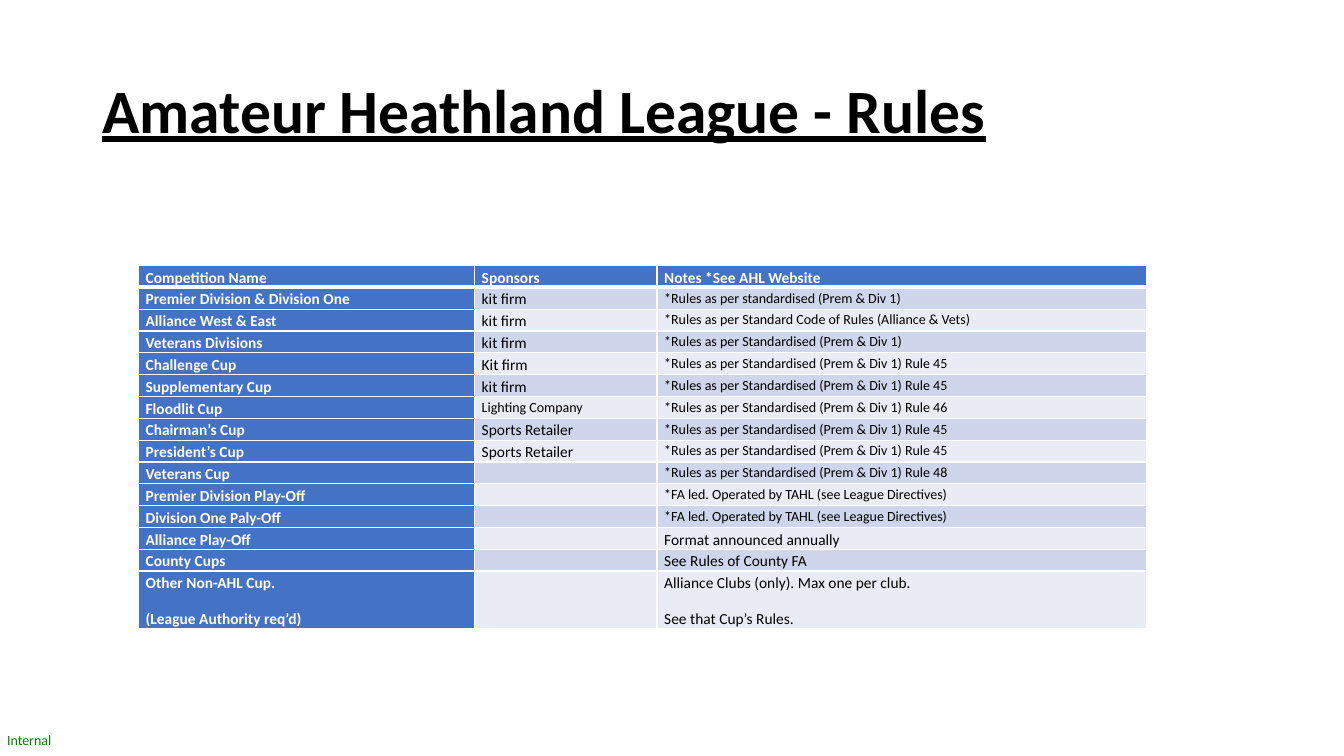
"""Build the league rules slide with its table of competitions."""
from dataclasses import dataclass

from lxml import etree
from pptx import Presentation
from pptx.dml.color import RGBColor
from pptx.enum.text import MSO_ANCHOR, MSO_AUTO_SIZE
from pptx.oxml.ns import qn
from pptx.slide import Slide
from pptx.table import _Cell
from pptx.text.text import TextFrame
from pptx.util import Cm, Length, Pt

MIDDLE, TOP = MSO_ANCHOR.MIDDLE, MSO_ANCHOR.TOP
NO_FIT, GROW = MSO_AUTO_SIZE.NONE, MSO_AUTO_SIZE.SHAPE_TO_FIT_TEXT


@dataclass(frozen=True)
class Theme:
    """Colours, font and type sizes of the slide."""

    font: str = "Calibri"
    ink: str = "000000"
    paper: str = "FFFFFF"
    heading: str = "4472C4"
    odd_band: str = "CFD5EA"
    even_band: str = "E9EBF5"
    label: str = "008000"
    title_size: Length = Pt(44)
    body_size: Length = Pt(11)
    small_size: Length = Pt(10)
    rule: Length = Pt(1)
    header_rule: Length = Pt(3)


@dataclass(frozen=True)
class TextStyle:
    """Look of the runs in one text."""

    size: Length
    color: str
    bold: bool = False
    underline: bool = False


@dataclass(frozen=True)
class Competition:
    """One row of the rules table."""

    name: str
    sponsor: str
    notes: str
    small_sponsor: bool = False


THEME = Theme()
HEADING = TextStyle(THEME.body_size, THEME.paper, bold=True)
BODY = TextStyle(THEME.body_size, THEME.ink)
SMALL = TextStyle(THEME.small_size, THEME.ink)
TITLE = TextStyle(THEME.title_size, THEME.ink, bold=True, underline=True)
LABEL = TextStyle(THEME.small_size, THEME.label)

RULE_45 = "*Rules as per Standardised (Prem & Div 1) Rule 45"
FA_LED = "*FA led. Operated by TAHL (see League Directives)"
HEADER = Competition("Competition Name", "Sponsors", "Notes *See AHL Website")
COMPETITIONS = (
    Competition("Premier Division & Division One", "kit firm", "*Rules as per standardised (Prem & Div 1)"),
    Competition("Alliance West & East", "kit firm", "*Rules as per Standard Code of Rules (Alliance & Vets)"),
    Competition("Veterans Divisions", "kit firm", "*Rules as per Standardised (Prem & Div 1)"),
    Competition("Challenge Cup", "Kit firm", RULE_45),
    Competition("Supplementary Cup", "kit firm", RULE_45),
    Competition("Floodlit Cup", "Lighting Company", "*Rules as per Standardised (Prem & Div 1) Rule 46", small_sponsor=True),
    Competition("Chairman’s Cup", "Sports Retailer", RULE_45),
    Competition("President’s Cup", "Sports Retailer", RULE_45),
    Competition("Veterans Cup", "", "*Rules as per Standardised (Prem & Div 1) Rule 48"),
    Competition("Premier Division Play-Off", "", FA_LED),
    Competition("Division One Paly-Off", "", FA_LED),
    Competition("Alliance Play-Off", "", "Format announced annually"),
    Competition("County Cups", "", "See Rules of County FA"),
    Competition(
        "Other Non-AHL Cup.\n(League Authority req’d)",
        "",
        "Alliance Clubs (only). Max one per club.\nSee that Cup’s Rules.",
    ),
)
COLUMN_WIDTHS = (Cm(8.47), Cm(4.6), Cm(12.33))
ROW_HEIGHT, LAST_ROW_HEIGHT = Cm(0.55), Cm(1.45)


def write(frame: TextFrame, text: str, style: TextStyle, **spacing: object) -> None:
    """Fill a text frame, one paragraph for each line."""
    frame.text = text
    run_format = {"name": THEME.font, "size": style.size, "bold": style.bold, "underline": style.underline}
    for paragraph in frame.paragraphs:
        for key, value in spacing.items():
            setattr(paragraph, key, value)
        for run in paragraph.runs:
            for key, value in run_format.items():
                setattr(run.font, key, value)
            run.font.color.rgb = RGBColor.from_string(style.color)
        if not paragraph.runs:
            etree.SubElement(paragraph._p, qn("a:endParaRPr"), sz=str(int(style.size.pt * 100)))


def add_text(
    slide: Slide, box: tuple[Length, ...], text: str, style: TextStyle, frame_format: dict[str, object], **spacing: object
) -> None:
    """Add a text box with the given frame format."""
    frame = slide.shapes.add_textbox(*box).text_frame
    for key, value in frame_format.items():
        setattr(frame, key, value)
    write(frame, text, style, **spacing)


def add_borders(cell: _Cell, top: Length, bottom: Length) -> None:
    """Rule the four sides of a cell."""
    sides = {"lnL": THEME.rule, "lnR": THEME.rule, "lnT": top, "lnB": bottom}
    for side, width in sides.items():
        line = etree.SubElement(cell._tc.get_or_add_tcPr(), qn(f"a:{side}"), w=str(int(width)))
        fill = etree.SubElement(line, qn("a:solidFill"))
        etree.SubElement(fill, qn("a:srgbClr"), val=THEME.paper)


def format_cell(cell: _Cell, text: str, style: TextStyle, fill: str, row: int) -> None:
    """Write, rule and fill one table cell."""
    cell_format = {
        "margin_left": Cm(0.18),
        "margin_right": Cm(0.18),
        "margin_top": Cm(0),
        "margin_bottom": Cm(0),
        "vertical_anchor": TOP,
    }
    for key, value in cell_format.items():
        setattr(cell, key, value)
    write(cell.text_frame, text, style, line_spacing=1.15, space_after=Pt(10))
    add_borders(
        cell,
        top=THEME.header_rule if row == 1 else THEME.rule,
        bottom=THEME.header_rule if row == 0 else THEME.rule,
    )
    cell.fill.solid()
    cell.fill.fore_color.rgb = RGBColor.from_string(fill)


def add_rules_table(slide: Slide) -> None:
    """Add the table of competitions, sponsors and notes."""
    entries = (HEADER, *COMPETITIONS)
    height = ROW_HEIGHT * len(COMPETITIONS) + LAST_ROW_HEIGHT
    table = slide.shapes.add_table(
        len(entries), len(COLUMN_WIDTHS), Cm(3.49), Cm(6.69), sum(COLUMN_WIDTHS), height
    ).table
    for column, width in zip(table.columns, COLUMN_WIDTHS):
        column.width = width
    for row, entry in enumerate(entries):
        table.rows[row].height = LAST_ROW_HEIGHT if entry is entries[-1] else ROW_HEIGHT
        band = THEME.odd_band if row % 2 else THEME.even_band
        sponsor_style = SMALL if entry.small_sponsor else BODY
        notes_style = SMALL if entry.notes.startswith("*") else BODY
        parts = ((entry.name, HEADING), (entry.sponsor, sponsor_style), (entry.notes, notes_style))
        for column, (text, style) in enumerate(parts):
            is_heading = row == 0 or column == 0
            format_cell(
                table.cell(row, column),
                text,
                HEADING if is_heading else style,
                THEME.heading if is_heading else band,
                row,
            )


def main() -> None:
    """Build and save the slide."""
    presentation = Presentation()
    presentation.slide_width, presentation.slide_height = Cm(33.87), Cm(19.05)
    slide = presentation.slides.add_slide(presentation.slide_layouts[6])
    label_format = dict.fromkeys(("margin_left", "margin_right", "margin_top", "margin_bottom"), Cm(0))
    label_format |= {"word_wrap": False, "auto_size": GROW}
    add_text(slide, (Cm(0.18), Cm(18.44), Cm(1.19), Cm(0.43)), "Internal", LABEL, label_format)
    title_format = {"word_wrap": True, "auto_size": NO_FIT, "vertical_anchor": MIDDLE}
    add_text(
        slide,
        (Cm(2.33), Cm(1.01), Cm(29.21), Cm(3.68)),
        "Amateur Heathland League - Rules",
        TITLE,
        title_format,
        line_spacing=0.9,
    )
    add_rules_table(slide)
    presentation.save("out.pptx")


if __name__ == "__main__":
    main()
